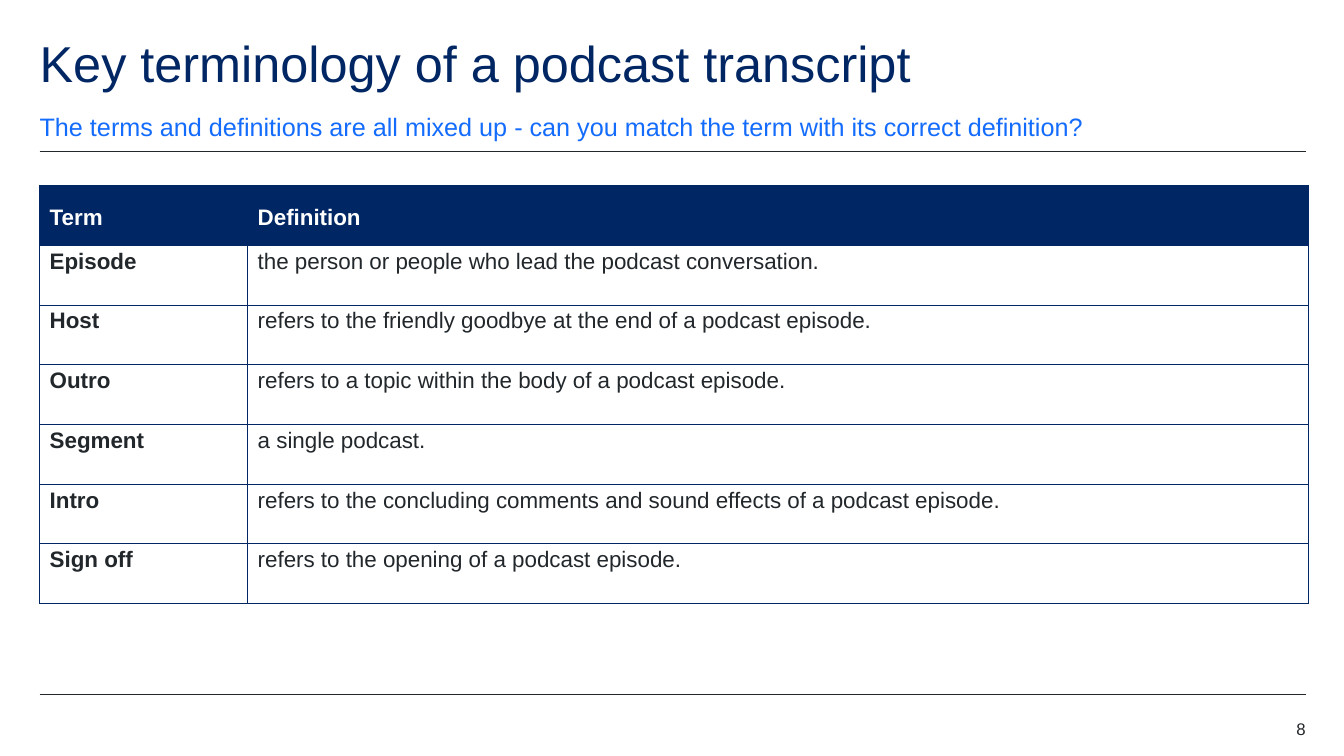
from dataclasses import dataclass

from lxml.etree import SubElement
from pptx import Presentation
from pptx.dml.color import RGBColor
from pptx.enum.shapes import MSO_CONNECTOR
from pptx.enum.text import MSO_ANCHOR, MSO_AUTO_SIZE, PP_ALIGN
from pptx.oxml import parse_xml
from pptx.oxml.ns import nsdecls, qn
from pptx.util import Inches, Pt

COLORS = {"navy": "002664", "blue": "146CFD", "ink": "22272B", "white": "FFFFFF"}
FONT = "Arial"
SLIDE_WIDTH, SLIDE_HEIGHT = Inches(13.33), Inches(7.5)
LEFT, RIGHT = 0.0295, 0.9715
RULE_ROWS = (0.2, 0.9187)
TABLE_TOP, TABLE_WIDTH = 0.2453, 0.9437
COLUMN_SHARES = (0.164, 0.836)
ROW_HEIGHT = 0.079
BORDER_POINTS = 0.5


@dataclass(frozen=True)
class Area:
    left: float
    top: float
    width: float
    height: float


@dataclass(frozen=True)
class TextStyle:
    size: float
    color: str
    bold: bool = False
    align: PP_ALIGN = PP_ALIGN.LEFT
    anchor: MSO_ANCHOR = MSO_ANCHOR.TOP
    line_spacing: float = 1.0
    space_after: float = 0


@dataclass(frozen=True)
class Entry:
    term: str
    definition: str


TITLE_AREA = Area(LEFT, 0.052, 0.8267, 0.08)
SUBTITLE_AREA = Area(LEFT, 0.1413, 0.93, 0.0453)
NUMBER_AREA = Area(RIGHT - 0.059, 0.9507, 0.059, 0.0267)

TITLE_STYLE = TextStyle(36, "navy", line_spacing=0.9)
SUBTITLE_STYLE = TextStyle(18, "blue", anchor=MSO_ANCHOR.BOTTOM, line_spacing=1.5, space_after=12)
NUMBER_STYLE = TextStyle(12, "ink", align=PP_ALIGN.RIGHT)
HEADER_STYLE = TextStyle(16, "white", bold=True, anchor=MSO_ANCHOR.MIDDLE, line_spacing=1.2)
TERM_STYLE = TextStyle(16, "ink", bold=True)
DEFINITION_STYLE = TextStyle(16, "ink")

HEADER = Entry("Term", "Definition")
ENTRIES = (
    Entry("Episode", "the person or people who lead the podcast conversation."),
    Entry("Host", "refers to the friendly goodbye at the end of a podcast episode."),
    Entry("Outro", "refers to a topic within the body of a podcast episode."),
    Entry("Segment", "a single podcast."),
    Entry("Intro", "refers to the concluding comments and sound effects of a podcast episode."),
    Entry("Sign off", "refers to the opening of a podcast episode."),
)


def color(name: str) -> RGBColor:
    return RGBColor.from_string(COLORS[name])


def across(share: float) -> int:
    return round(SLIDE_WIDTH * share)


def down(share: float) -> int:
    return round(SLIDE_HEIGHT * share)


def write(frame, text: str, style: TextStyle) -> None:
    frame.text = text
    frame.word_wrap = True
    paragraph = frame.paragraphs[0]
    paragraph.alignment = style.align
    paragraph.line_spacing = style.line_spacing
    paragraph.space_before = Pt(0)
    paragraph.space_after = Pt(style.space_after)
    font = paragraph.font
    font.name, font.size, font.bold = FONT, Pt(style.size), style.bold
    font.color.rgb = color(style.color)


def fill_box(box, area: Area, text: str, style: TextStyle) -> None:
    box.left, box.top = across(area.left), down(area.top)
    box.width, box.height = across(area.width), down(area.height)
    frame = box.text_frame
    frame.auto_size = MSO_AUTO_SIZE.NONE
    frame.margin_left = frame.margin_right = frame.margin_top = frame.margin_bottom = 0
    frame.vertical_anchor = style.anchor
    write(frame, text, style)


def add_rule(page, row: float) -> None:
    rule = page.shapes.add_connector(
        MSO_CONNECTOR.STRAIGHT, across(LEFT), down(row), across(RIGHT), down(row))
    rule.line.color.rgb = color("ink")
    rule.line.width = Pt(BORDER_POINTS)
    SubElement(rule._element.spPr, qn("a:effectLst"))


def add_borders(cell) -> None:
    properties = cell._tc.get_or_add_tcPr()
    for side in ("lnL", "lnR", "lnT", "lnB"):
        properties.append(parse_xml(
            f'<a:{side} {nsdecls("a")} w="{Pt(BORDER_POINTS)}"><a:solidFill>'
            f'<a:srgbClr val="{COLORS["navy"]}"/></a:solidFill></a:{side}>'))


def fill_cell(cell, text: str, style: TextStyle, background: str) -> None:
    add_borders(cell)
    cell.fill.solid()
    cell.fill.fore_color.rgb = color(background)
    cell.margin_left = cell.margin_right = Inches(0.1)
    cell.margin_top = cell.margin_bottom = Inches(0.04)
    cell.vertical_anchor = style.anchor
    write(cell.text_frame, text, style)


def add_glossary(page) -> None:
    rows = (HEADER, *ENTRIES)
    table = page.shapes.add_table(
        len(rows), len(COLUMN_SHARES), across(LEFT), down(TABLE_TOP),
        across(TABLE_WIDTH), down(ROW_HEIGHT * len(rows))).table
    table.horz_banding = False
    for column, share in zip(table.columns, COLUMN_SHARES):
        column.width = across(TABLE_WIDTH * share)
    for index, entry in enumerate(rows):
        table.rows[index].height = down(ROW_HEIGHT)
        is_header = entry is HEADER
        background = "navy" if is_header else "white"
        term_style = HEADER_STYLE if is_header else TERM_STYLE
        definition_style = HEADER_STYLE if is_header else DEFINITION_STYLE
        fill_cell(table.cell(index, 0), entry.term, term_style, background)
        fill_cell(table.cell(index, 1), entry.definition, definition_style, background)


def add_text(page, area: Area, text: str, style: TextStyle) -> None:
    fill_box(page.shapes.add_textbox(0, 0, 0, 0), area, text, style)


def main() -> None:
    deck = Presentation()
    deck.slide_width, deck.slide_height = SLIDE_WIDTH, SLIDE_HEIGHT
    page = deck.slides.add_slide(deck.slide_layouts.get_by_name("Title Only"))
    fill_box(page.shapes.title, TITLE_AREA, "Key terminology of a podcast transcript", TITLE_STYLE)
    add_text(
        page, SUBTITLE_AREA,
        "The terms and definitions are all mixed up - can you match the term with its correct definition?",
        SUBTITLE_STYLE)
    for row in RULE_ROWS:
        add_rule(page, row)
    add_glossary(page)
    add_text(page, NUMBER_AREA, "8", NUMBER_STYLE)
    deck.save("out.pptx")


if __name__ == "__main__":
    main()
